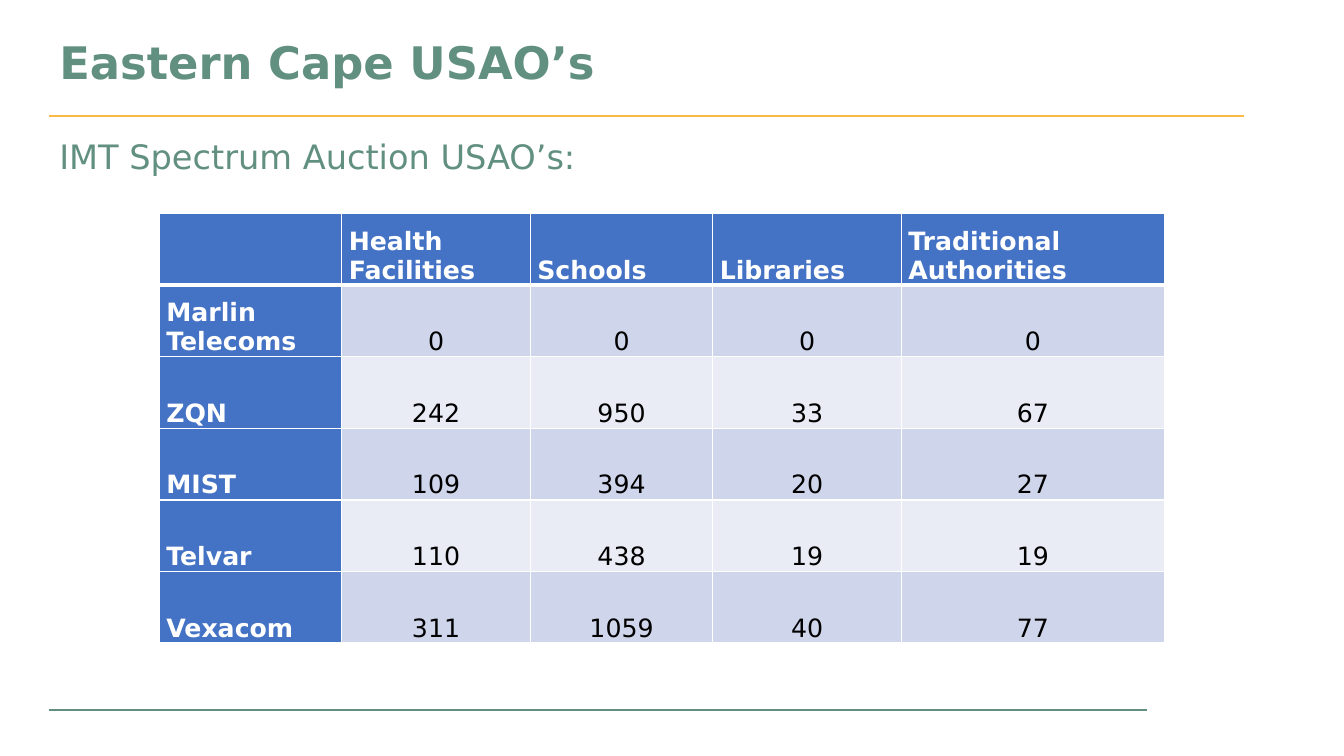
from lxml import etree
from pptx import Presentation
from pptx.dml.color import RGBColor
from pptx.enum.shapes import MSO_CONNECTOR
from pptx.enum.text import MSO_ANCHOR, PP_ALIGN
from pptx.oxml.ns import qn
from pptx.util import Inches, Pt

STRAIGHT = MSO_CONNECTOR.STRAIGHT
TOP, MIDDLE, BOTTOM = MSO_ANCHOR.TOP, MSO_ANCHOR.MIDDLE, MSO_ANCHOR.BOTTOM
LEFT, CENTER = PP_ALIGN.LEFT, PP_ALIGN.CENTER

GREEN = RGBColor(0x62, 0x90, 0x80)
GOLD = RGBColor(0xFD, 0xB9, 0x45)
BLUE = RGBColor(0x44, 0x72, 0xC4)
DARK_BAND = RGBColor(0xCF, 0xD5, 0xEA)
LIGHT_BAND = RGBColor(0xE9, 0xEB, 0xF5)
WHITE = RGBColor(0xFF, 0xFF, 0xFF)
BLACK = RGBColor(0, 0, 0)

COLUMN_WIDTHS = [1.81, 1.87, 1.81, 1.87, 2.61]
ROW_HEIGHT = 0.71
OBLIGATIONS = [
    ["", "Health Facilities", "Schools", "Libraries", "Traditional Authorities"],
    ["Marlin Telecoms", 0, 0, 0, 0],
    ["ZQN", 242, 950, 33, 67],
    ["MIST", 109, 394, 20, 27],
    ["Telvar", 110, 438, 19, 19],
    ["Vexacom", 311, 1059, 40, 77],
]


def write_text(frame, text, size=18, color=BLACK, bold=False, align=LEFT,
               line_spacing=None):
    frame.word_wrap = True
    paragraph = frame.paragraphs[0]
    paragraph.alignment = align
    if line_spacing:
        paragraph.line_spacing = line_spacing
    run = paragraph.add_run()
    run.text = text
    run.font.name = "DejaVu Sans"
    run.font.size = Pt(size)
    run.font.bold = bold
    run.font.color.rgb = color


def add_cell_borders(cell, top, bottom):
    """Draw white borders; top and bottom are widths in points."""
    properties = cell._tc.get_or_add_tcPr()
    for side, width in (("L", 1), ("R", 1), ("T", top), ("B", bottom)):
        border = etree.SubElement(properties, qn(f"a:ln{side}"), w=str(Pt(width)))
        fill = etree.SubElement(border, qn("a:solidFill"))
        etree.SubElement(fill, qn("a:srgbClr"), val=str(WHITE))


class SlideBuilder:
    def __init__(self, slide):
        self.slide = slide

    def rule(self, left, right, y, color):
        line = self.slide.shapes.add_connector(
            STRAIGHT, Inches(left), Inches(y), Inches(right), Inches(y))
        line.line.color.rgb = color
        line.line.width = Pt(1.5)
        etree.SubElement(line._element.spPr, qn("a:effectLst"))

    def text(self, left, top, width, height, text, anchor=TOP, **style):
        box = self.slide.shapes.add_textbox(
            Inches(left), Inches(top), Inches(width), Inches(height))
        box.text_frame.vertical_anchor = anchor
        write_text(box.text_frame, text, **style)

    def table(self, left, top, widths, row_height, rows):
        table = self.slide.shapes.add_table(
            len(rows), len(widths), Inches(left), Inches(top),
            Inches(sum(widths)), Inches(row_height * len(rows))).table
        for column, width in zip(table.columns, widths):
            column.width = Inches(width)
        for row_index, values in enumerate(rows):
            for column_index, value in enumerate(values):
                self.cell(table.cell(row_index, column_index), value,
                          row_index, column_index)

    def cell(self, cell, value, row, column):
        heading = row == 0 or column == 0
        add_cell_borders(cell, top=3 if row == 1 else 1, bottom=3 if row == 0 else 1)
        cell.fill.solid()
        band = DARK_BAND if row % 2 else LIGHT_BAND
        cell.fill.fore_color.rgb = BLUE if heading else band
        cell.vertical_anchor = BOTTOM
        cell.margin_left = cell.margin_right = Inches(0.07)
        cell.margin_top = cell.margin_bottom = 0
        if value != "":
            write_text(cell.text_frame, str(value), bold=heading,
                       color=WHITE if heading else BLACK,
                       align=LEFT if heading else CENTER)


def main():
    presentation = Presentation()
    presentation.slide_width = Inches(13.33)
    presentation.slide_height = Inches(7.5)
    builder = SlideBuilder(
        presentation.slides.add_slide(presentation.slide_layouts[6]))

    builder.rule(0.49, 12.34, 1.15, GOLD)
    builder.rule(0.49, 11.38, 7.04, GREEN)
    builder.text(0.49, 1.34, 11.26, 5.5, "IMT Spectrum Auction USAO’s:",
                 size=24, color=GREEN, line_spacing=0.9)
    builder.text(0.49, 0.32, 11.5, 0.64, "Eastern Cape USAO’s", anchor=MIDDLE,
                 size=32, color=GREEN, bold=True, line_spacing=0.9)
    builder.table(1.58, 2.12, COLUMN_WIDTHS, ROW_HEIGHT, OBLIGATIONS)
    presentation.save("out.pptx")


if __name__ == "__main__":
    main()
